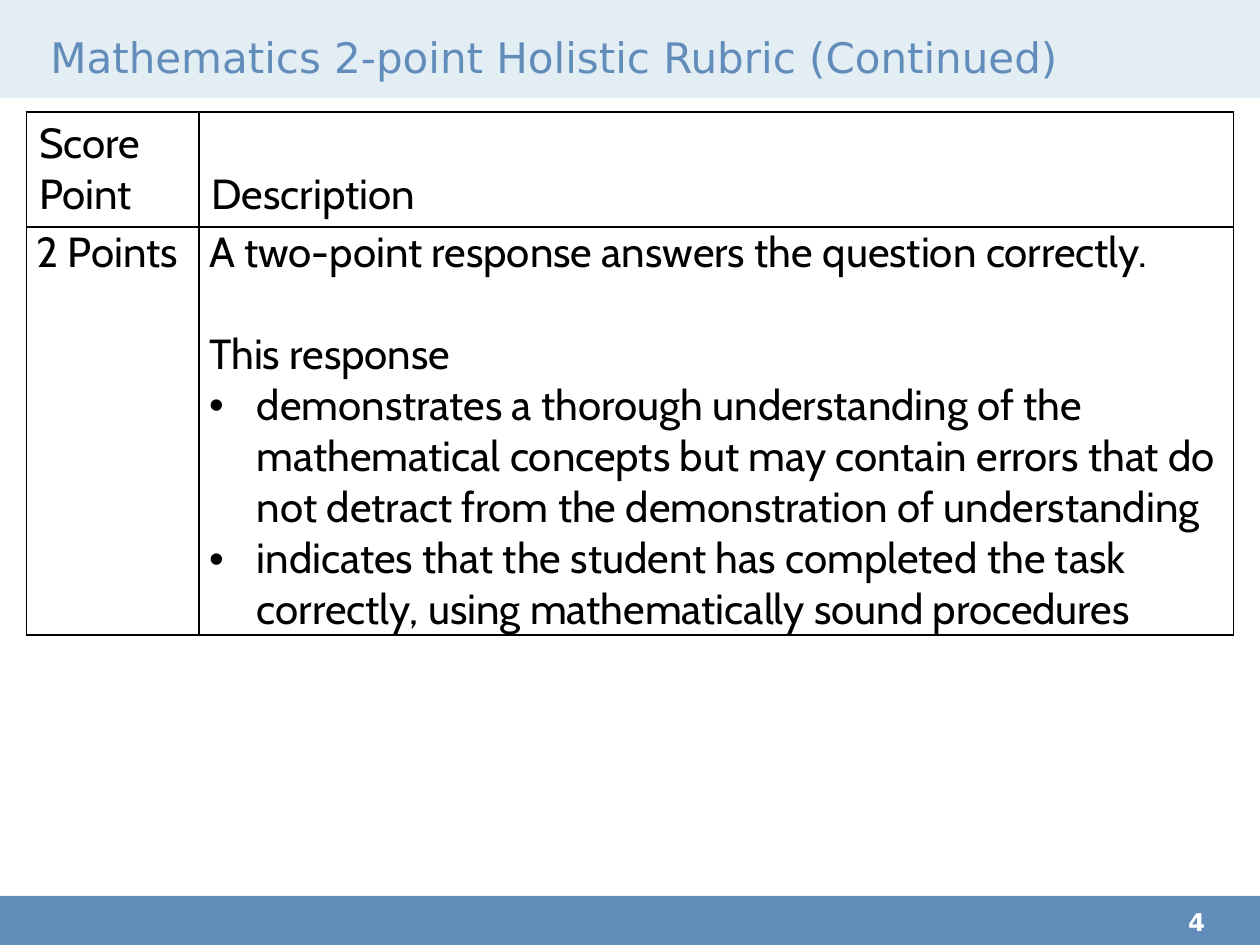
from lxml import etree
from pptx import Presentation
from pptx.dml.color import RGBColor
from pptx.enum.shapes import MSO_SHAPE
from pptx.enum.text import MSO_ANCHOR
from pptx.oxml.ns import qn
from pptx.util import Inches, Pt

RECTANGLE = MSO_SHAPE.RECTANGLE
TOP, MIDDLE, BOTTOM = MSO_ANCHOR.TOP, MSO_ANCHOR.MIDDLE, MSO_ANCHOR.BOTTOM
BLUE = RGBColor(0x62, 0x8D, 0xBB)
PALE_BLUE = RGBColor(0xE3, 0xED, 0xF4)
WHITE = RGBColor(0xFF, 0xFF, 0xFF)
BLACK = RGBColor(0, 0, 0)


def style_text(paragraph, font_name, size, color, bold=False):
    for run in paragraph.runs:
        run.font.name = font_name
        run.font.size = Pt(size)
        run.font.color.rgb = color
        run.font.bold = bold


def set_borders(cell, color, width):
    properties = cell._tc.get_or_add_tcPr()
    # Border lines must come before the fill
    for position, side in enumerate(("a:lnL", "a:lnR", "a:lnT", "a:lnB")):
        line = etree.Element(qn(side), w=str(Pt(width)))
        fill = etree.SubElement(line, qn("a:solidFill"))
        etree.SubElement(fill, qn("a:srgbClr"), val=str(color))
        properties.insert(position, line)


prs = Presentation()
prs.slide_width, prs.slide_height = Inches(10), Inches(7.5)
slide = prs.slides.add_slide(prs.slide_layouts[6])

# Footer band, header band and the white body edge over it
for left, top, width, height, color in (
    (0, 7.11, 10.01, 0.42, BLUE),
    (0, 0, 10, 1.31, PALE_BLUE),
    (0, 0.78, 10, 0.86, WHITE),
):
    band = slide.shapes.add_shape(
        RECTANGLE, Inches(left), Inches(top), Inches(width), Inches(height))
    band.shadow.inherit = False
    band.fill.solid()
    band.fill.fore_color.rgb = color
    band.line.fill.background()

# Title and page number
for text, left, top, width, height, right_inset, bottom_inset, anchor, size, color, bold in (
    ("Mathematics 2-point Holistic Rubric (Continued)",
     0.4, 0.23, 9, 0.49, 0.1, 0.05, MIDDLE, 24, BLUE, False),
    ("4", 9.43, 7.2, 0.57, 0.3, 0, 0, TOP, 14, WHITE, True),
):
    frame = slide.shapes.add_textbox(
        Inches(left), Inches(top), Inches(width), Inches(height)).text_frame
    frame.word_wrap = True
    frame.margin_left = frame.margin_top = 0
    frame.margin_right, frame.margin_bottom = Inches(right_inset), Inches(bottom_inset)
    frame.vertical_anchor = anchor
    frame.text = text
    style_text(frame.paragraphs[0], "DejaVu Sans", size, color, bold)

# Rubric table
rubric_rows = (
    ("Score Point", "Description"),
    ("2 Points", "\n".join((
        "A two-point response answers the question correctly.",
        "This response",
        "demonstrates a thorough understanding of the mathematical concepts but may "
        "contain errors that do not detract from the demonstration of understanding",
        "indicates that the student has completed the task correctly, using "
        "mathematically sound procedures",
    ))),
)
rubric = slide.shapes.add_table(
    2, 2, Inches(0.21), Inches(0.89), Inches(9.58), Inches(4.15)).table
for column, width in zip(rubric.columns, (1.37, 8.21)):
    column.width = Inches(width)
for row, height in zip(rubric.rows, (0.91, 3.24)):
    row.height = Inches(height)

for row_index, texts in enumerate(rubric_rows):
    is_header = row_index == 0
    for column_index, text in enumerate(texts):
        cell = rubric.cell(row_index, column_index)
        cell.text = text
        cell.fill.background()
        set_borders(cell, BLACK, 1)
        cell.vertical_anchor = BOTTOM if is_header else TOP
        cell.margin_left = cell.margin_right = Inches(0.1 if is_header else 0.08)
        cell.margin_top = cell.margin_bottom = Inches(0.05 if is_header else 0)
        for paragraph in cell.text_frame.paragraphs:
            style_text(paragraph, "Cabin", 24, BLACK)

# One open line after the opening sentence, then the bulleted criteria
opening, _, *criteria = rubric.cell(1, 1).text_frame.paragraphs
opening.space_after = Pt(29.2)
for criterion in criteria:
    properties = criterion._p.get_or_add_pPr()
    properties.set("marL", str(Inches(0.38)))
    properties.set("indent", str(-Inches(0.38)))
    etree.SubElement(properties, qn("a:buFont"), typeface="Arial")
    etree.SubElement(properties, qn("a:buChar"), char="•")

prs.save("out.pptx")
